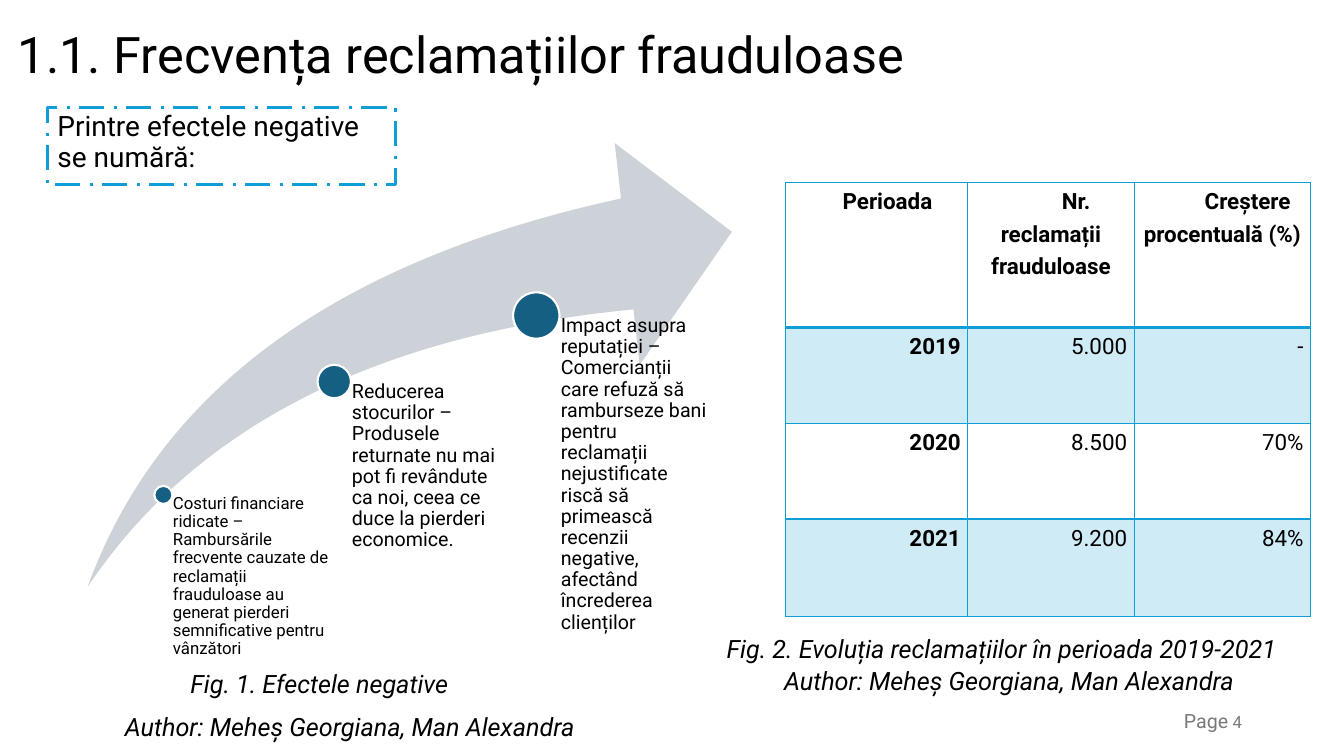
from dataclasses import dataclass

from lxml.etree import SubElement
from pptx import Presentation
from pptx.dml.color import RGBColor
from pptx.enum.dml import MSO_LINE
from pptx.enum.shapes import MSO_SHAPE
from pptx.enum.text import MSO_ANCHOR, PP_ALIGN
from pptx.oxml import parse_xml
from pptx.oxml.ns import nsdecls, qn
from pptx.util import Emu, Inches, Pt

BLACK = RGBColor(0x00, 0x00, 0x00)
WHITE = RGBColor(0xFF, 0xFF, 0xFF)
BLUE = RGBColor(0x0F, 0x9E, 0xD5)
TEAL = RGBColor(0x15, 0x60, 0x82)
PALE = RGBColor(0xCC, 0xD2, 0xD8)
GREY = RGBColor(0x79, 0x79, 0x79)
FONT = "Roboto"
W, H = Inches(13.33), Inches(7.5)


def x(share: float) -> Emu:
    """Percent of the slide width."""
    return Emu(round(W * share / 100))


def y(share: float) -> Emu:
    """Percent of the slide height."""
    return Emu(round(H * share / 100))


@dataclass
class Effect:
    left: float
    top: float
    dot: float  # diameter, percent of the slide width
    width: float
    size: int
    text: str


@dataclass
class Caption:
    left: float
    top: float
    width: float
    text: str


AUTHOR = "Author: Meheș Georgiana, Man Alexandra"
CAPTIONS = [
    Caption(53.33, 83.07, 50.03, "Fig. 2. Evoluția reclamațiilor în perioada 2019-2021"),
    Caption(57.6, 87.33, 52.13, AUTHOR),
    Caption(13.43, 87.73, 43.43, "Fig. 1. Efectele negative"),
    Caption(8.55, 93.47, 52.13, AUTHOR),
]
EFFECTS = [
    Effect(11.48, 64.27, 1.35, 12.3, 12,
           "Costuri financiare ridicate – Rambursările frecvente cauzate de reclamații "
           "frauduloase au generat pierderi semnificative pentru vânzători"),
    Effect(23.63, 48.27, 2.48, 12.68, 14,
           "Reducerea stocurilor – Produsele returnate nu mai pot fi revândute ca noi, "
           "ceea ce duce la pierderi economice."),
    Effect(38.18, 38.67, 3.45, 12.68, 14,
           "Impact asupra reputației – Comercianții care refuză să ramburseze bani pentru "
           "reclamații nejustificate riscă să primească recenzii negative, afectând "
           "încrederea clienților"),
]
EFFECTS_BOTTOM = y(82.4)
COLS = [13.58, 12.38, 13.13]
ROWS = [19.2, 12.67, 12.67, 12.93]
CLAIMS = [
    ["Perioada", "Nr. reclamații frauduloase", "Creștere procentuală (%)"],
    ["2019", "5.000", "-"],
    ["2020", "8.500", "70%"],
    ["2021", "9.200", "84%"],
]


def add_run(p, text: str, *, size: float, color=BLACK, bold=False, italic=False) -> None:
    r = p.add_run()
    r.text = text
    r.font.name, r.font.size = FONT, Pt(size)
    r.font.bold, r.font.italic = bold, italic
    r.font.color.rgb = color


def write(tf, text: str, *, align=PP_ALIGN.LEFT, spacing=1.0, anchor=MSO_ANCHOR.TOP, **font):
    tf.word_wrap = True
    tf.vertical_anchor = anchor
    p = tf.paragraphs[0]
    p.alignment, p.line_spacing = align, spacing
    add_run(p, text, **font)
    return p


def add_text(s, left: int, top: int, width: int, height: int, text: str, **fmt):
    tf = s.shapes.add_textbox(left, top, width, height).text_frame
    write(tf, text, **fmt)
    return tf


def add_shape(s, kind, left: int, top: int, width: int, height: int,
              fill=None, line=None, weight: float = 1):
    sp = s.shapes.add_shape(kind, left, top, width, height)
    sp.shadow.inherit = False
    if fill is None:
        sp.fill.background()
    else:
        sp.fill.solid()
        sp.fill.fore_color.rgb = fill
    if line is None:
        sp.line.fill.background()
    else:
        sp.line.color.rgb = line
        sp.line.width = Pt(weight)
    return sp


def add_effect(s, e: Effect) -> None:
    left, top, dot = x(e.left), y(e.top), x(e.dot)
    add_shape(s, MSO_SHAPE.OVAL, left, top, dot, dot, TEAL, WHITE, 1.5)
    mid_x, mid_y = left + dot // 2, top + dot // 2
    tf = add_text(s, mid_x, mid_y, x(e.width), EFFECTS_BOTTOM - mid_y,
                  e.text, size=e.size, spacing=0.9)
    tf.margin_left = round(dot * 0.53)
    tf.margin_top = tf.margin_right = tf.margin_bottom = 0


def format_cell(cell, row: int) -> None:
    """Fill every second row with a light tint and draw the borders."""
    tc_pr = cell._tc.get_or_add_tcPr()
    if row % 2:
        cell.fill.solid()
        cell.fill.fore_color.rgb = BLUE
        SubElement(tc_pr.find(".//" + qn("a:srgbClr")), qn("a:alpha"), val="20000")
    else:
        cell.fill.background()
    for i, side in enumerate("LRTB"):
        thick = (row, side) in ((0, "B"), (1, "T"))
        tc_pr.insert(i, parse_xml(
            f'<a:ln{side} {nsdecls("a")} w="{Pt(2 if thick else 1)}"><a:solidFill>'
            f'<a:srgbClr val="{BLUE}"/></a:solidFill></a:ln{side}>'))


def add_claims_table(s) -> None:
    tbl = s.shapes.add_table(len(ROWS), len(COLS), x(58.43), y(24.13),
                             x(sum(COLS)), y(sum(ROWS))).table
    tbl.first_row = tbl.horz_banding = False
    for col, share in zip(tbl.columns, COLS):
        col.width = x(share)
    for row, share in zip(tbl.rows, ROWS):
        row.height = y(share)
    for i, values in enumerate(CLAIMS):
        for j, text in enumerate(values):
            cell = tbl.cell(i, j)
            cell.margin_left = cell.margin_right = Inches(0.07)
            cell.margin_top = cell.margin_bottom = 0
            if i:
                align = PP_ALIGN.RIGHT
            else:
                align = PP_ALIGN.CENTER if j else PP_ALIGN.LEFT
            p = write(cell.text_frame, text, align=align, spacing=1.25, size=16,
                      bold=i == 0 or j == 0)
            p_pr = p._p.get_or_add_pPr()
            p_pr.set("marL", "0")
            p_pr.set("indent", str(Inches(0.5)))
            format_cell(cell, i)


def main() -> None:
    prs = Presentation()
    prs.slide_width, prs.slide_height = W, H
    s = prs.slides.add_slide(prs.slide_layouts[6])

    # Title and framed lead-in
    add_text(s, x(0.6), y(1.33), x(86.25), y(12.53), "1.1. Frecvența reclamațiilor frauduloase",
             size=36, spacing=0.9, anchor=MSO_ANCHOR.MIDDLE)
    frame = add_shape(s, MSO_SHAPE.RECTANGLE, x(3.53), y(14.27), x(25.88), y(10.13),
                      line=BLUE, weight=2.25)
    frame.line.dash_style = MSO_LINE.LONG_DASH_DOT
    write(frame.text_frame, "Printre efectele negative se numără:", size=20, spacing=0.9)

    # Table of claims
    add_claims_table(s)

    # Rising arrow with the three effects
    arrow = add_shape(s, MSO_SHAPE.SWOOSH_ARROW, x(6.53), y(18.93), x(47.93), y(58.67), PALE)
    arrow.adjustments[0] = arrow.adjustments[1] = 0.25
    for e in EFFECTS:
        add_effect(s, e)

    # Captions and page number
    for c in CAPTIONS:
        add_text(s, x(c.left), y(c.top), x(c.width), y(5.33), c.text, size=18, italic=True)
    tf = add_text(s, x(70.65), y(92.67), x(22.5), y(5.33), "Page", size=14, color=GREY,
                  align=PP_ALIGN.RIGHT, anchor=MSO_ANCHOR.MIDDLE)
    add_run(tf.paragraphs[0], " 4", size=12, color=GREY)

    prs.save("out.pptx")


if __name__ == "__main__":
    main()
